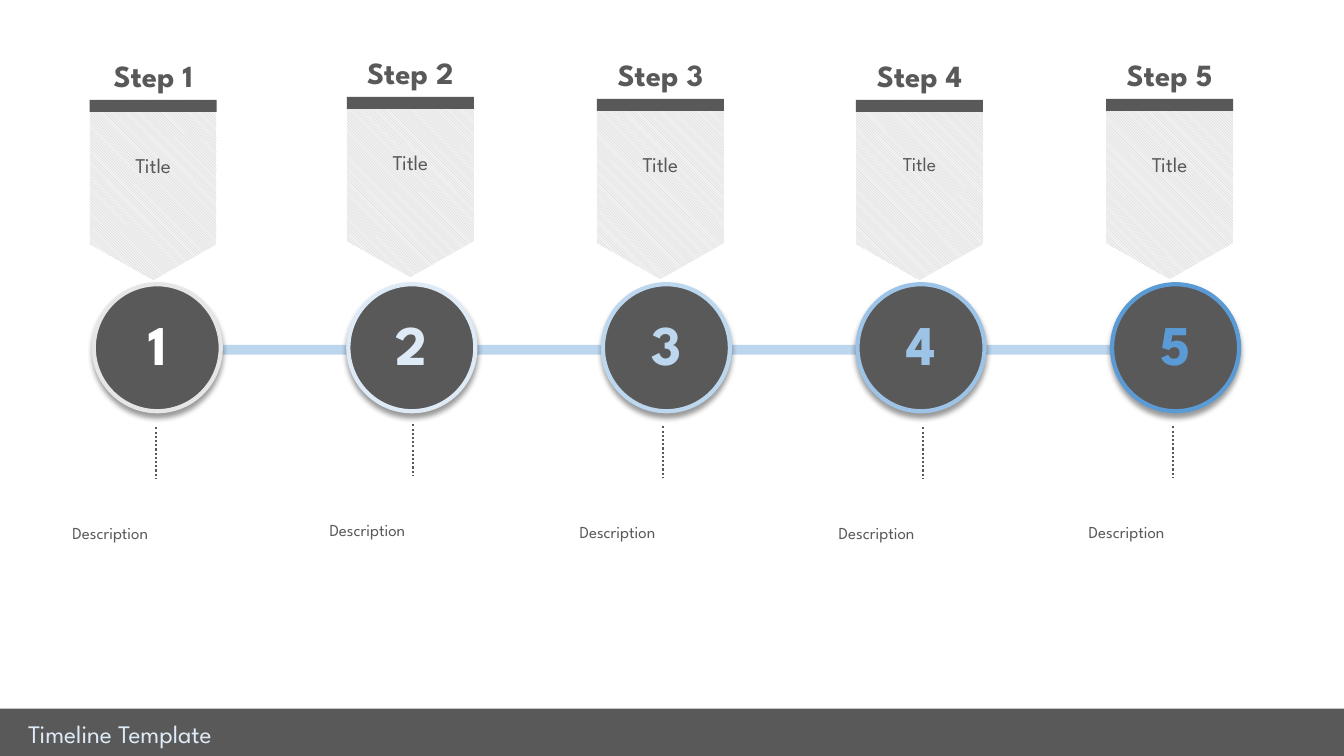
import dataclasses

import lxml.etree
import pptx
import pptx.dml.color
import pptx.enum.dml
import pptx.enum.shapes
import pptx.enum.text
import pptx.oxml
import pptx.oxml.ns
import pptx.util

Inches = pptx.util.Inches
Kind = pptx.enum.shapes.MSO_SHAPE
Align = pptx.enum.text.PP_ALIGN


@dataclasses.dataclass(frozen=True)
class Theme:
    font: str = "League Spartan"
    dark: str = "595959"
    rail: str = "9DC3E6"
    rail_opacity: int = 67
    hatch: str = "D0CECE"
    hatch_back: str = "F2F2F2"
    white: str = "FFFFFF"
    pale: str = "DEEBF7"
    milestone_outlines: tuple = ("E7E6E6", "DEEBF7", "BDD7EE", "9DC3E6", "5B9BD5")
    number_size: int = 40
    step_size: int = 22
    footer_size: int = 18
    label_size: int = 15
    small_label_size: int = 14
    description_size: int = 12


def color(value):
    return pptx.dml.color.RGBColor.from_string(value)


class TimelineSlide:
    """Draws styled timeline elements on one slide."""

    def __init__(self, slide, theme):
        self.slide = slide
        self.shapes = slide.shapes
        self.theme = theme

    def shape(self, kind, left, top, width, height):
        shape = self.shapes.add_shape(
            kind, Inches(left), Inches(top), Inches(width), Inches(height))
        shape.shadow.inherit = False
        shape.fill.solid()
        shape.fill.fore_color.rgb = color(self.theme.dark)
        shape.line.fill.background()
        return shape

    def circle(self, left, top, size, outline):
        circle = self.shape(Kind.OVAL, left, top, size, size)
        circle.line.color.rgb = color(outline)
        circle.line.width = pptx.util.Pt(3)
        effects = circle.element.spPr.find(pptx.oxml.ns.qn("a:effectLst"))
        effects.append(pptx.oxml.parse_xml(
            f'<a:outerShdw {pptx.oxml.ns.nsdecls("a")} blurRad="{pptx.util.Pt(4)}" '
            f'dist="{pptx.util.Pt(3)}" dir="5400000" algn="t" rotWithShape="0">'
            '<a:srgbClr val="000000"><a:alpha val="40000"/></a:srgbClr></a:outerShdw>'))

    def banner(self, left, top, width, height):
        banner = self.shape(Kind.FLOWCHART_OFFPAGE_CONNECTOR, left, top, width, height)
        banner.fill.patterned()
        banner.fill.pattern = pptx.enum.dml.MSO_PATTERN.LIGHT_DOWNWARD_DIAGONAL
        banner.fill.fore_color.rgb = color(self.theme.hatch)
        banner.fill.back_color.rgb = color(self.theme.hatch_back)

    def line(self, start, end, line_color, width, dash=None, opacity=None):
        line = self.shapes.add_connector(
            pptx.enum.shapes.MSO_CONNECTOR.STRAIGHT, *map(Inches, start + end))
        line.line.color.rgb = color(line_color)
        line.line.width = pptx.util.Pt(width)
        if dash:
            line.line.dash_style = dash
        properties = line.element.spPr
        if opacity:
            tint = next(properties.iter(pptx.oxml.ns.qn("a:srgbClr")))
            alpha = lxml.etree.SubElement(tint, pptx.oxml.ns.qn("a:alpha"))
            alpha.set("val", str(opacity * 1000))
        lxml.etree.SubElement(properties, pptx.oxml.ns.qn("a:effectLst"))

    def set_text(self, shape, text, size, text_color, bold=False, align=Align.CENTER):
        frame_format = {
            "word_wrap": True,
            "auto_size": pptx.enum.text.MSO_AUTO_SIZE.SHAPE_TO_FIT_TEXT,
            "vertical_anchor": pptx.enum.text.MSO_ANCHOR.TOP,
        }
        for name, value in frame_format.items():
            setattr(shape.text_frame, name, value)
        paragraph = shape.text_frame.paragraphs[0]
        paragraph.alignment = align
        run = paragraph.add_run()
        run.text = text
        font_format = {"name": self.theme.font, "size": pptx.util.Pt(size), "bold": bold}
        for name, value in font_format.items():
            setattr(run.font, name, value)
        run.font.color.rgb = color(text_color)

    def text(self, left, top, width, height, text, size, text_color, **style):
        box = self.shapes.add_textbox(
            Inches(left), Inches(top), Inches(width), Inches(height))
        self.set_text(box, text, size, text_color, **style)

    def title(self, left, top, width, height, text):
        title = self.shapes.title
        place = {"left": left, "top": top, "width": width, "height": height}
        for name, value in place.items():
            setattr(title, name, Inches(value))
        self.set_text(title, text, self.theme.footer_size, self.theme.pale, align=Align.LEFT)
        title.element.getparent().append(title.element)

    def milestone(self, number, left, size, outline, number_color):
        self.circle(left, 2.82, size, outline)
        self.text(left, 3.02, size, 0.77, str(number),
                  self.theme.number_size, number_color, bold=True)

    def step(self, number, left, top, width, label_size):
        theme = self.theme
        self.banner(left, top, width, 1.79)
        self.text(left, top - 0.48, width, 0.47, f"Step {number}",
                  theme.step_size, theme.dark, bold=True)
        self.shape(Kind.RECTANGLE, left, top, width, 0.12)
        self.text(left, top + 0.47, width, 0.35, "Title", label_size, theme.dark)
        self.text(left - 0.27, top + 4.15, 1.87, 0.3, "Description",
                  theme.description_size, theme.dark, align=Align.LEFT)
        stem = left + 0.66
        self.line((stem, top + 3.25), (stem, top + 3.76), theme.dark, 1.5,
                  dash=pptx.enum.dml.MSO_LINE.ROUND_DOT)


def main():
    theme = Theme()
    presentation = pptx.Presentation()
    presentation.slide_width = Inches(13.33)
    presentation.slide_height = Inches(7.5)
    timeline = TimelineSlide(
        presentation.slides.add_slide(presentation.slide_layouts[5]), theme)

    size = 1.26
    first_left, last_left = 0.93, 11.03
    pitch = (last_left - first_left) / (len(theme.milestone_outlines) - 1)
    timeline.line((1.86, 3.47), (11.92, 3.47), theme.rail, 7, opacity=theme.rail_opacity)
    for index, outline in enumerate(theme.milestone_outlines):
        number_color = outline if index else theme.white
        timeline.milestone(index + 1, first_left + index * pitch, size, outline, number_color)

    steps = [
        (0.89, 0.99, theme.label_size),
        (3.44, 0.96, theme.label_size),
        (5.92, 0.98, theme.label_size),
        (8.49, 0.99, theme.small_label_size),
        (10.97, 0.98, theme.label_size),
    ]
    for number, (left, top, label_size) in enumerate(steps, start=1):
        timeline.step(number, left, top, size, label_size)

    timeline.shape(Kind.RECTANGLE, 0, 7.03, 13.33, 0.47)
    timeline.title(0.18, 7.08, 7.85, 0.4, "Timeline Template")
    presentation.save("out.pptx")


if __name__ == "__main__":
    main()
